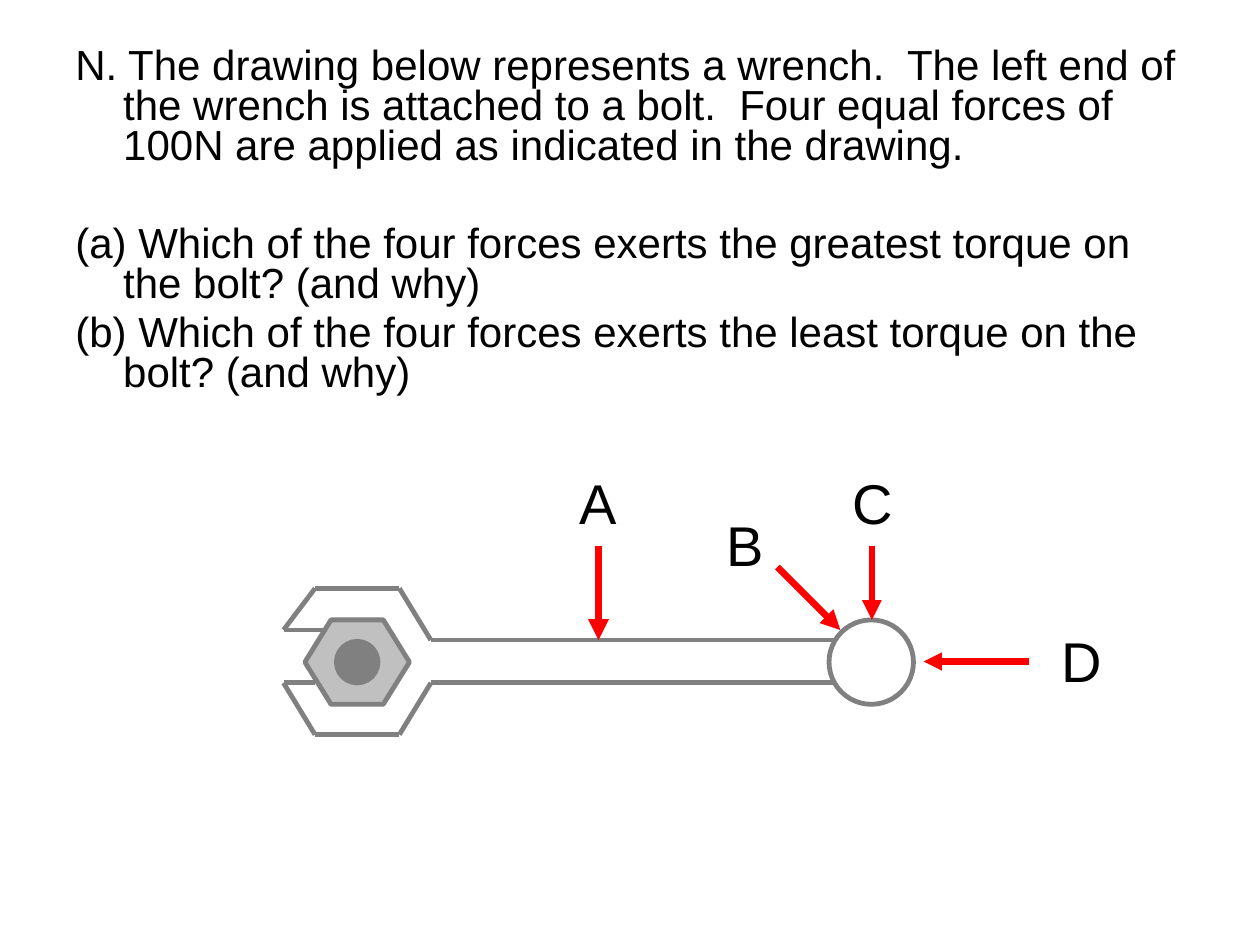
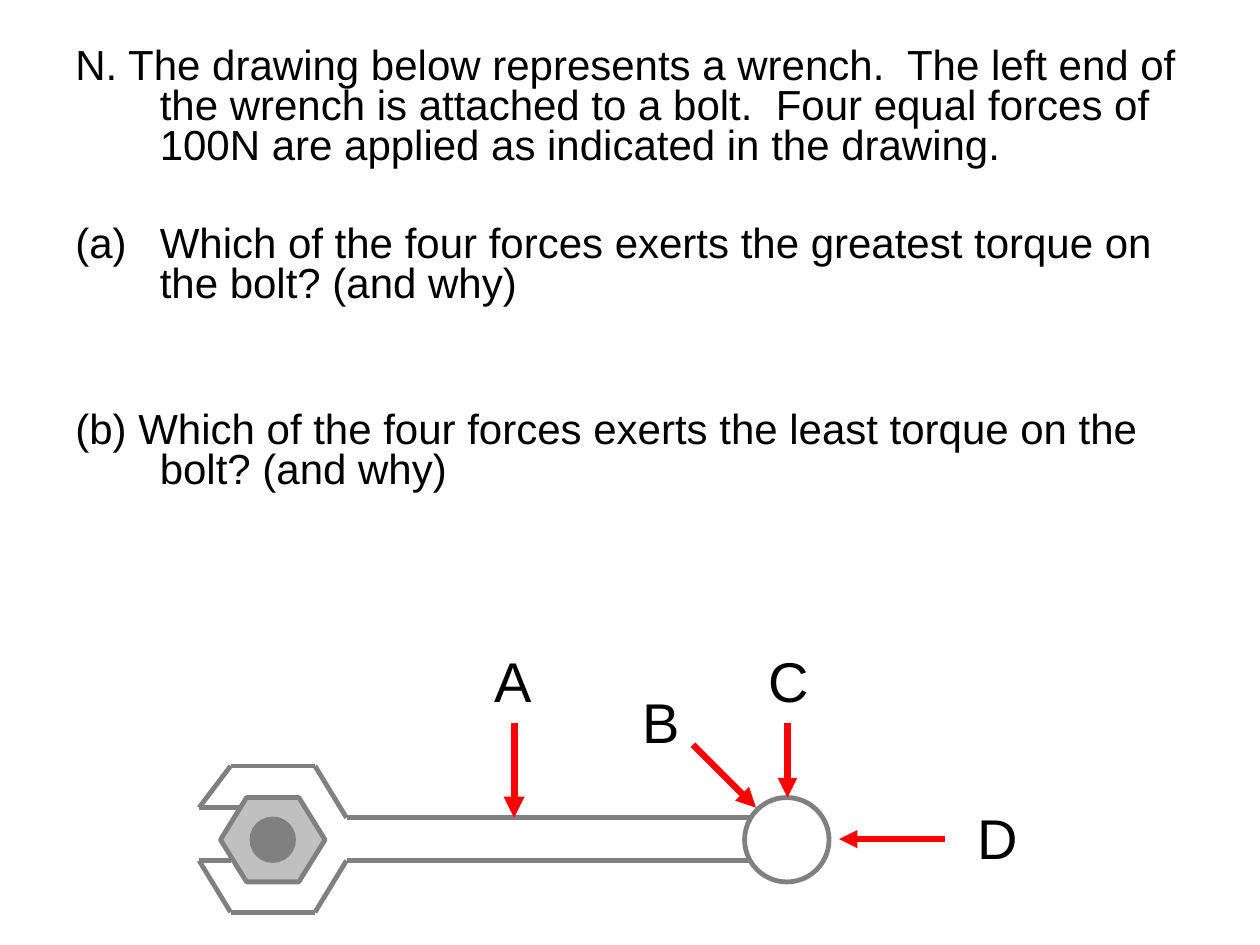
from dataclasses import dataclass
from typing import NamedTuple

from lxml import etree
from pptx import Presentation
from pptx.dml.color import RGBColor
from pptx.enum.shapes import MSO_CONNECTOR, MSO_SHAPE
from pptx.oxml.ns import qn
from pptx.util import Inches, Pt

STRAIGHT = MSO_CONNECTOR.STRAIGHT
HEXAGON = MSO_SHAPE.HEXAGON
OVAL = MSO_SHAPE.OVAL


@dataclass(frozen=True)
class Theme:
    font: str = "Arial"
    text: RGBColor = RGBColor(0, 0, 0)
    paper: RGBColor = RGBColor(255, 255, 255)
    steel: RGBColor = RGBColor(0x80, 0x80, 0x80)
    nut: RGBColor = RGBColor(0xC0, 0xC0, 0xC0)
    force: RGBColor = RGBColor(255, 0, 0)
    question_size: float = 24
    label_size: float = 32
    outline: float = 2.75
    line_spacing: float = 0.8
    paragraph_gap: float = 4.8
    blank_line: float = 27.8


THEME = Theme()


class Point(NamedTuple):
    x: float
    y: float


class Part(NamedTuple):
    """A filled piece of the wrench drawing, placed from the drawing's origin."""
    kind: MSO_SHAPE
    corner: Point
    width: float
    height: float
    fill: RGBColor


class Force(NamedTuple):
    name: str
    start: Point
    end: Point
    width: float
    label_corner: Point
    label_width: float


class Question(NamedTuple):
    text: str
    blank_lines_before: int = 0
    numbered: bool = False


class Problem(NamedTuple):
    questions: list[Question]
    hanging: float
    text_height: float
    wrench_origin: Point


INTRO = Question(
    "N. The drawing below represents a wrench.  The left end of the wrench is attached "
    "to a bolt.  Four equal forces of 100N are applied as indicated in the drawing."
)
GREATEST = "Which of the four forces exerts the greatest torque on the bolt? (and why)"
LEAST = "(b) Which of the four forces exerts the least torque on the bolt? (and why)"

PROBLEMS = [
    Problem([INTRO, Question("(a) " + GREATEST, 1), Question(LEAST)],
            0.38, 2.92, Point(2.25, 4.67)),
    Problem([INTRO, Question(GREATEST, 1, numbered=True), Question(LEAST, 2)],
            0.67, 3.75, Point(1.58, 6.08)),
]

BOLT = [
    Part(HEXAGON, Point(0.17, 0.25), 0.83, 0.67, THEME.nut),
    Part(OVAL, Point(0.42, 0.42), 0.33, 0.33, THEME.steel),
]
HANDLE_END = Part(OVAL, Point(4.33, 0.25), 0.67, 0.67, THEME.paper)
WRENCH_EDGES = [
    [Point(0.25, 0.75), Point(0, 0.75), Point(0.25, 1.16),
     Point(0.92, 1.16), Point(1.17, 0.75), Point(4.42, 0.75)],
    [Point(0.33, 0.33), Point(0, 0.33), Point(0.25, 0),
     Point(0.92, 0), Point(1.17, 0.41), Point(4.42, 0.41)],
]
FORCES = [
    Force("A", Point(2.5, -0.34), Point(2.5, 0.41), 4, Point(2.25, -1), 0.58),
    Force("B", Point(3.92, -0.17), Point(4.42, 0.33), 3.75, Point(3.42, -0.67), 0.58),
    Force("D", Point(5.92, 0.58), Point(5.08, 0.58), 3.5, Point(6.08, 0.25), 0.67),
    Force("C", Point(4.67, -0.34), Point(4.67, 0.25), 3.75, Point(4.42, -1), 0.5),
]


def shifted(point: Point, origin: Point) -> Point:
    return Point(origin.x + point.x, origin.y + point.y)


def style_font(paragraph, size: float) -> None:
    paragraph.font.name = THEME.font
    paragraph.font.size = Pt(size)
    paragraph.font.color.rgb = THEME.text


def add_text_frame(slide, corner: Point, width: float, height: float):
    box = slide.shapes.add_textbox(
        Inches(corner.x), Inches(corner.y), Inches(width), Inches(height))
    box.text_frame.word_wrap = True
    return box.text_frame


def add_questions(slide, problem: Problem) -> None:
    frame = add_text_frame(slide, Point(0.5, 0.33), 9, problem.text_height)
    for index, question in enumerate(problem.questions):
        paragraph = frame.add_paragraph() if index else frame.paragraphs[0]
        paragraph.text = question.text
        paragraph.line_spacing = THEME.line_spacing
        paragraph.space_before = Pt(
            THEME.paragraph_gap + question.blank_lines_before * THEME.blank_line)
        style_font(paragraph, THEME.question_size)
        set_hanging_indent(paragraph, problem.hanging, question.numbered)


def set_hanging_indent(paragraph, hanging: float, numbered: bool) -> None:
    properties = paragraph._p.get_or_add_pPr()
    properties.set("marL", str(Inches(hanging)))
    properties.set("indent", str(-Inches(hanging)))
    if numbered:
        number = etree.Element(qn("a:buAutoNum"), type="alphaLcParenBoth")
        properties.find(qn("a:defRPr")).addprevious(number)


def add_line(slide, start: Point, end: Point, color: RGBColor, width: float,
             arrow: bool = False) -> None:
    connector = slide.shapes.add_connector(
        STRAIGHT, Inches(start.x), Inches(start.y), Inches(end.x), Inches(end.y))
    connector.line.color.rgb = color
    connector.line.width = Pt(width)
    if arrow:
        etree.SubElement(connector.line._get_or_add_ln(), qn("a:tailEnd"), type="triangle")
    etree.SubElement(connector._element.spPr, qn("a:effectLst"))


def add_part(slide, part: Part, origin: Point) -> None:
    corner = shifted(part.corner, origin)
    shape = slide.shapes.add_shape(
        part.kind, Inches(corner.x), Inches(corner.y), Inches(part.width), Inches(part.height))
    if part.kind == HEXAGON:
        shape.adjustments[0] = 0.31
    shape.shadow.inherit = False
    shape.fill.solid()
    shape.fill.fore_color.rgb = part.fill
    shape.line.color.rgb = THEME.steel
    shape.line.width = Pt(THEME.outline)


def add_force(slide, force: Force, origin: Point) -> None:
    add_line(slide, shifted(force.start, origin), shifted(force.end, origin),
             THEME.force, force.width, arrow=True)
    frame = add_text_frame(slide, shifted(force.label_corner, origin), force.label_width, 0.63)
    paragraph = frame.paragraphs[0]
    paragraph.text = force.name
    style_font(paragraph, THEME.label_size)


def add_wrench(slide, origin: Point) -> None:
    for part in BOLT:
        add_part(slide, part, origin)
    for edge in WRENCH_EDGES:
        for start, end in zip(edge, edge[1:]):
            add_line(slide, shifted(start, origin), shifted(end, origin),
                     THEME.steel, THEME.outline)
    add_part(slide, HANDLE_END, origin)
    for force in FORCES:
        add_force(slide, force, origin)


def main() -> None:
    presentation = Presentation()
    presentation.slide_width = Inches(10)
    presentation.slide_height = Inches(7.5)
    blank_layout = presentation.slide_layouts[6]
    for problem in PROBLEMS:
        slide = presentation.slides.add_slide(blank_layout)
        add_questions(slide, problem)
        add_wrench(slide, problem.wrench_origin)
    presentation.save("out.pptx")


if __name__ == "__main__":
    main()
